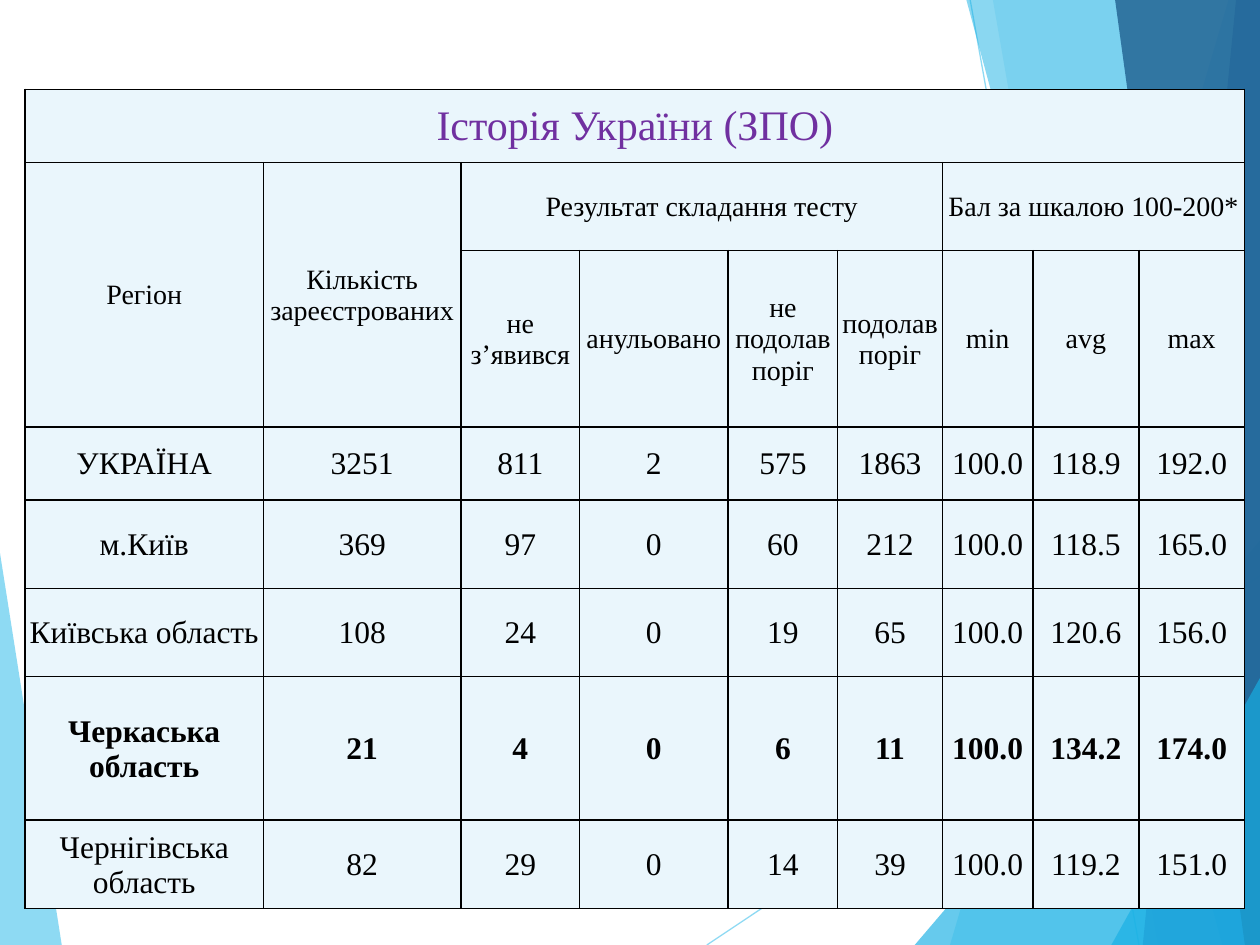
from dataclasses import dataclass

from lxml import etree
from pptx import Presentation
from pptx import util as u
from pptx.dml.color import RGBColor
from pptx.enum import shapes, text
from pptx.oxml import ns


@dataclass(frozen=True)
class Theme:
    font: str = "Times New Roman"
    title_size: int = 24
    header_size: int = 16
    body_size: int = 18
    title: str = "7030A0"
    ink: str = "000000"
    cell: str = "EAF6FC"
    sky: str = "5FCBEF"
    cyan: str = "17B0E4"
    blue: str = "2E83C3"
    navy: str = "226292"
    border: float = 1
    ray: float = 0.75


THEME = Theme()

# Background facets: colour, opacity in percent, corners in inches
LEFT_FACETS = [(THEME.sky, 70, [(0, 4.39), (0.49, 7.5), (0, 7.5)])]
RIGHT_FACETS = [
    (THEME.sky, 36, [(9.75, 0), (7.54, 7.5), (10, 7.5), (10, 0)]),
    (THEME.sky, 20, [(7.88, 0), (9.19, 7.5), (10, 7.5), (10, 0)]),
    (THEME.cyan, 66, [(7.26, 7.5), (10, 4.29), (10, 7.5)]),
    (THEME.cyan, 50, [(7.67, 0), (9.7, 7.5), (10, 7.5), (10, 0)]),
    (THEME.blue, 70, [(9.81, 0), (9.07, 7.5), (10, 7.5), (10, 0)]),
    (THEME.navy, 82, [(8.85, 0), (9.88, 7.5), (10, 7.5), (10, 0)]),
    (THEME.cyan, 66, [(8.82, 7.5), (10, 5.38), (10, 7.5)]),
]
RAYS = [((5.61, 7.5), (10, 4.57)), ((7.7, 0), (9.04, 7.5))]

# Results table
COLUMN_WIDTHS = [1.89, 1.57, 0.94, 1.18, 0.87, 0.83, 0.72, 0.84, 0.84]
ROW_HEIGHTS = [0.58, 0.7, 1.4, 0.58, 0.7, 0.7, 1.14, 0.7]
TITLE = "Історія України (ЗПО)"
# Header cells: row, column, rows spanned, columns spanned, wording
GROUP_HEADERS = [
    (1, 0, 2, 1, "Регіон"),
    (1, 1, 2, 1, "Кількість зареєстрованих"),
    (1, 2, 1, 4, "Результат складання тесту"),
    (1, 6, 1, 3, "Бал за шкалою 100-200*"),
]
SUBHEADERS = ["не з’явився", "анульовано", "не подолав поріг",
              "подолав поріг", "min", "avg", "max"]
REGIONS = [
    ("УКРАЇНА", "3251", "811", "2", "575", "1863", "100.0", "118.9", "192.0"),
    ("м.Київ", "369", "97", "0", "60", "212", "100.0", "118.5", "165.0"),
    ("Київська область", "108", "24", "0", "19", "65", "100.0", "120.6", "156.0"),
    ("Черкаська область", "21", "4", "0", "6", "11", "100.0", "134.2", "174.0"),
    ("Чернігівська область", "82", "29", "0", "14", "39", "100.0", "119.2", "151.0"),
]
FIRST_REGION_ROW = 3
HIGHLIGHTED = "Черкаська область"


def set_opacity(fill, percent):
    color = fill._xPr.find(".//" + ns.qn("a:srgbClr"))
    etree.SubElement(color, ns.qn("a:alpha"), val=str(percent * 1000))


def add_facets(slide, left, top, facets):
    """Translucent polygons, measured from the box corner."""
    for color, opacity, corners in facets:
        points = [(u.Inches(left + x), u.Inches(top + y)) for x, y in corners]
        builder = slide.shapes.build_freeform(*points[0])
        builder.add_line_segments(points[1:], close=True)
        facet = builder.convert_to_shape()
        facet.shadow.inherit = False
        facet.fill.solid()
        facet.fill.fore_color.rgb = RGBColor.from_string(color)
        set_opacity(facet.fill, opacity)
        facet.line.fill.background()


def add_rays(slide, left, top):
    """Thin slanted lines, measured from the box corner."""
    for (x1, y1), (x2, y2) in RAYS:
        ray = slide.shapes.add_connector(
            shapes.MSO_CONNECTOR.STRAIGHT,
            u.Inches(left + x1), u.Inches(top + y1),
            u.Inches(left + x2), u.Inches(top + y2))
        ray.line.width = u.Pt(THEME.ray)
        ray.line.color.rgb = RGBColor.from_string(THEME.sky)
        set_opacity(ray.line.fill, 70)
        etree.SubElement(ray._element.spPr, ns.qn("a:effectLst"))


def style_cell(cell):
    """Borders come first, as the schema puts them before the fill."""
    properties = cell._tc.get_or_add_tcPr()
    for side in ("lnL", "lnR", "lnT", "lnB"):
        border = etree.SubElement(properties, ns.qn("a:" + side),
                                  w=str(u.Pt(THEME.border)))
        solid = etree.SubElement(border, ns.qn("a:solidFill"))
        etree.SubElement(solid, ns.qn("a:srgbClr"), val=THEME.ink)
    cell.fill.solid()
    cell.fill.fore_color.rgb = RGBColor.from_string(THEME.cell)
    cell.vertical_anchor = text.MSO_ANCHOR.MIDDLE
    cell.margin_left = cell.margin_right = cell.margin_top = u.Inches(0.01)
    cell.margin_bottom = 0


def write(cell, wording, size, color=THEME.ink, bold=False):
    paragraph = cell.text_frame.paragraphs[0]
    paragraph.alignment = text.PP_ALIGN.CENTER
    run = paragraph.add_run()
    run.text = wording
    run.font.name = THEME.font
    run.font.size = u.Pt(size)
    run.font.bold = bold
    run.font.color.rgb = RGBColor.from_string(color)


def add_results(slide, left, top, width, height):
    frame = slide.shapes.add_table(
        len(ROW_HEIGHTS), len(COLUMN_WIDTHS),
        u.Inches(left), u.Inches(top), u.Inches(width), u.Inches(height))
    results = frame.table
    results.first_row = results.horz_banding = False
    for column, share in zip(results.columns, COLUMN_WIDTHS):
        column.width = u.Inches(width * share / sum(COLUMN_WIDTHS))
    for row, share in zip(results.rows, ROW_HEIGHTS):
        row.height = u.Inches(height * share / sum(ROW_HEIGHTS))
    for cell in results.iter_cells():
        style_cell(cell)

    # Title row and headers
    results.cell(0, 0).merge(results.cell(0, len(COLUMN_WIDTHS) - 1))
    write(results.cell(0, 0), TITLE, THEME.title_size, THEME.title)
    for row, column, tall, wide, wording in GROUP_HEADERS:
        header = results.cell(row, column)
        header.merge(results.cell(row + tall - 1, column + wide - 1))
        write(header, wording, THEME.header_size)
    for column, wording in enumerate(SUBHEADERS, start=2):
        write(results.cell(2, column), wording, THEME.header_size)

    # One row for each region
    for row, region in enumerate(REGIONS, start=FIRST_REGION_ROW):
        for column, value in enumerate(region):
            write(results.cell(row, column), value, THEME.body_size,
                  bold=region[0] == HIGHLIGHTED)


def main():
    deck = Presentation()
    deck.slide_width, deck.slide_height = u.Inches(10), u.Inches(7.5)
    slide = deck.slides.add_slide(deck.slide_layouts[6])
    add_facets(slide, 0, 0, LEFT_FACETS)
    add_rays(slide, 0, 0)
    add_facets(slide, 0, 0, RIGHT_FACETS)
    add_results(slide, 0.2, 0.71, 9.68, 6.5)
    deck.save("out.pptx")


if __name__ == "__main__":
    main()
